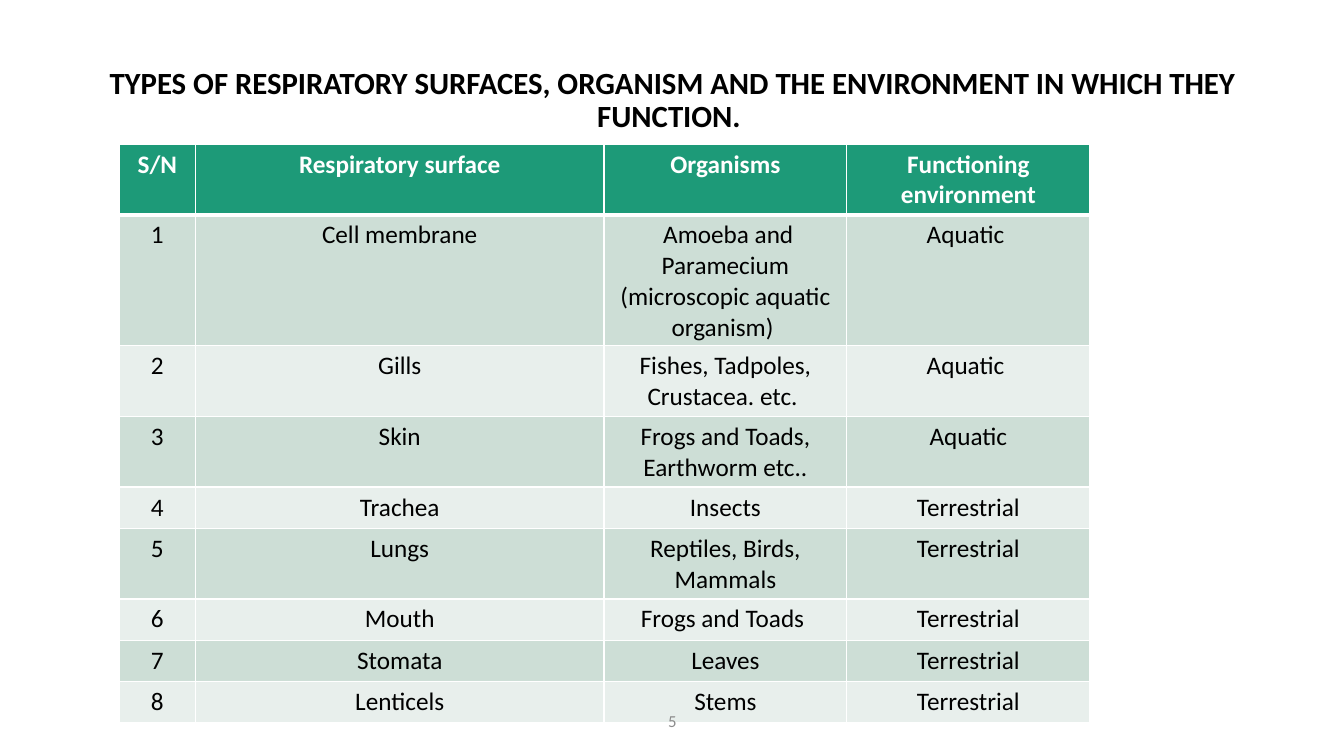
from dataclasses import dataclass

from lxml.etree import SubElement
from pptx import Presentation
from pptx.dml.color import RGBColor as RGB
from pptx.enum.text import MSO_ANCHOR as Anchor, PP_ALIGN as Align
from pptx.oxml.ns import qn
from pptx.util import Pt

SCALE = 9144  # EMU in one px, 100 px to the inch
FONT = "Calibri"
BLACK = RGB(0x00, 0x00, 0x00)
WHITE = RGB(0xFF, 0xFF, 0xFF)
GREY = RGB(0x8C, 0x8C, 0x8C)
GREEN = RGB(0x1D, 0x9A, 0x78)
BANDS = (RGB(0xCD, 0xDE, 0xD6), RGB(0xE8, 0xEF, 0xEC))

COLS = (76, 405, 241, 241)
HEAD_H, ROW_H = 53, 41
HEADS = ("S/N", "Respiratory surface", "Organisms", "Functioning environment")
ROWS = (
    ("Cell membrane", " Amoeba and Paramecium (microscopic aquatic organism) ", "Aquatic "),
    ("Gills", "Fishes, Tadpoles, Crustacea. etc. ", "Aquatic "),
    ("Skin", "Frogs and Toads, Earthworm etc..", "Aquatic"),
    ("Trachea", "Insects", "Terrestrial"),
    ("Lungs", "Reptiles, Birds, Mammals", "Terrestrial"),
    ("Mouth", "Frogs and Toads ", "Terrestrial"),
    ("Stomata", "Leaves", "Terrestrial"),
    ("Lenticels", "Stems", "Terrestrial"),
)


@dataclass(frozen=True)
class Style:
    size: int
    color: RGB
    bold: bool = False


@dataclass(frozen=True)
class Label:
    text: str
    left: int
    top: int
    width: int
    height: int
    style: Style
    space: float = 1.0


HEAD = Style(18, WHITE, True)
BODY = Style(18, BLACK)
LABELS = (
    Label("TYPES OF RESPIRATORY SURFACES, ORGANISM AND THE ENVIRONMENT "
          "IN WHICH THEY FUNCTION. ", 92, 40, 1150, 121, Style(22, BLACK, True), 0.9),
    Label("5", 442, 695, 450, 40, Style(12, GREY)),
)


def px(n: int) -> int:
    return n * SCALE


def write(frame, text: str, style: Style, space: float = 1.0) -> None:
    frame.text = text
    para = frame.paragraphs[0]
    para.alignment = Align.CENTER
    para.line_spacing = space
    for run in para.runs:
        run.font.name = FONT
        run.font.size = Pt(style.size)
        run.font.bold = style.bold
        run.font.color.rgb = style.color


def add_label(slide, label: Label) -> None:
    box = slide.shapes.add_textbox(
        px(label.left), px(label.top), px(label.width), px(label.height))
    box.text_frame.word_wrap = True
    box.text_frame.vertical_anchor = Anchor.MIDDLE
    write(box.text_frame, label.text, label.style, label.space)


def edge(cell, top: int, bottom: int) -> None:
    props = cell._tc.get_or_add_tcPr()
    for side, width in (("L", 1), ("R", 1), ("T", top), ("B", bottom)):
        line = SubElement(props, qn(f"a:ln{side}"), w=str(Pt(width)))
        fill = SubElement(line, qn("a:solidFill"))
        SubElement(fill, qn("a:srgbClr"), val=str(WHITE))


def add_grid(slide) -> None:
    lines = [HEADS] + [(str(n), *row) for n, row in enumerate(ROWS, 1)]
    frame = slide.shapes.add_table(
        len(lines), len(COLS), px(118), px(143), px(sum(COLS)), px(572))
    grid = frame.table
    for col, width in zip(grid.columns, COLS):
        col.width = px(width)
    for r, line in enumerate(lines):
        grid.rows[r].height = px(ROW_H if r else HEAD_H)
        for c, text in enumerate(line):
            cell = grid.cell(r, c)
            # A thick rule parts the header from the body
            edge(cell, 3 if r == 1 else 1, 1 if r else 3)
            cell.fill.solid()
            cell.fill.fore_color.rgb = BANDS[(r - 1) % 2] if r else GREEN
            write(cell.text_frame, text, BODY if r else HEAD)
    frame.height = px(572)


def main() -> None:
    deck = Presentation()
    deck.slide_width, deck.slide_height = px(1333), px(750)
    slide = deck.slides.add_slide(deck.slide_layouts[6])
    title, number = LABELS
    # Title, table, then the page number on top
    add_label(slide, title)
    add_grid(slide)
    add_label(slide, number)
    deck.save("out.pptx")


if __name__ == "__main__":
    main()
